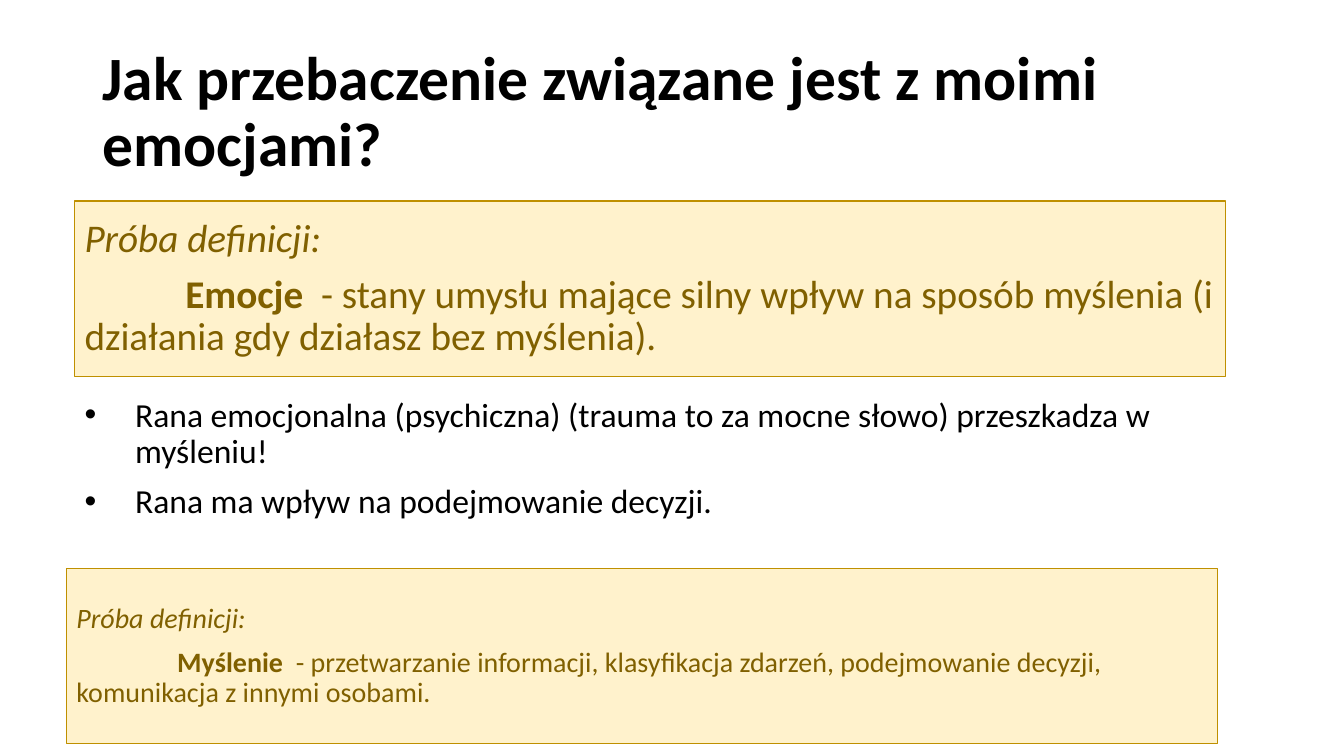
from pptx import Presentation
from pptx.dml.color import RGBColor
from pptx.enum import shapes, text
from pptx.util import Pt

BLACK = RGBColor(0x00, 0x00, 0x00)
CREAM = RGBColor(0xFF, 0xF2, 0xCC)
GOLD = RGBColor(0xBF, 0x90, 0x00)
BROWN = RGBColor(0x80, 0x60, 0x00)
FONT = "Calibri"

TITLE = "Jak przebaczenie związane jest z moimi emocjami?"
WOUNDS = [
    "Rana emocjonalna (psychiczna) (trauma to za mocne słowo) przeszkadza w myśleniu!",
    "Rana ma wpływ na podejmowanie decyzji.",
]
EMOTIONS = " - stany umysłu mające silny wpływ na sposób myślenia (i działania gdy działasz bez myślenia)."
THINKING = (" - przetwarzanie informacji, klasyfikacja zdarzeń, podejmowanie decyzji, "
            "komunikacja z innymi osobami.")


def place(shape, left, top, width, height):
    shape.left, shape.top = Pt(left), Pt(top)
    shape.width, shape.height = Pt(width), Pt(height)


def format_para(para, size, color, before=10, margin=0, indent=0):
    para.alignment = text.PP_ALIGN.LEFT
    para.line_spacing = 0.9
    para.space_before = Pt(before)
    para.font.name = FONT
    para.font.size = Pt(size)
    para.font.color.rgb = color
    properties = para._p.get_or_add_pPr()
    properties.set("marL", str(Pt(margin)))
    properties.set("indent", str(Pt(indent)))


def set_frame(frame, anchor):
    frame.word_wrap = True
    frame.auto_size = text.MSO_AUTO_SIZE.NONE
    frame.vertical_anchor = anchor


def fill_title(title):
    place(title, 66, 28.75, 828, 104.4)
    set_frame(title.text_frame, text.MSO_ANCHOR.MIDDLE)
    title.text_frame.text = TITLE
    para = title.text_frame.paragraphs[0]
    format_para(para, 44, BLACK, before=0)
    para.font.bold = True


def fill_list(body):
    place(body, 53.3, 280.8, 828, 125.3)
    set_frame(body.text_frame, text.MSO_ANCHOR.TOP)
    body.text_frame.text = "\n".join(WOUNDS)
    for para in body.text_frame.paragraphs:
        format_para(para, 24, BLACK, margin=36, indent=-36)


def add_definition(page, left, top, size, term, meaning):
    box = page.shapes.add_shape(shapes.MSO_SHAPE.RECTANGLE,
                                Pt(left), Pt(top), Pt(822.2), Pt(125.3))
    box.shadow.inherit = False
    box.fill.solid()
    box.fill.fore_color.rgb = CREAM
    box.line.color.rgb = GOLD
    box.line.width = Pt(0.75)

    frame = box.text_frame
    set_frame(frame, text.MSO_ANCHOR.MIDDLE)
    heading = frame.paragraphs[0]
    heading.text = "Próba definicji:"
    format_para(heading, size, BROWN)
    heading.font.italic = True

    definition = frame.add_paragraph()
    format_para(definition, size, BROWN, indent=72)
    span = definition.add_run()
    span.text = term + " "
    span.font.bold = True
    definition.add_run().text = meaning


def main():
    deck = Presentation()
    deck.slide_width, deck.slide_height = Pt(960), Pt(540)
    page = deck.slides.add_slide(deck.slide_layouts[1])
    fill_title(page.shapes.title)
    fill_list(page.placeholders[1])
    add_definition(page, 53.3, 143.6, 28, "Emocje", EMOTIONS)
    add_definition(page, 47.5, 406.1, 20, "Myślenie", THINKING)
    deck.save("out.pptx")


if __name__ == "__main__":
    main()
